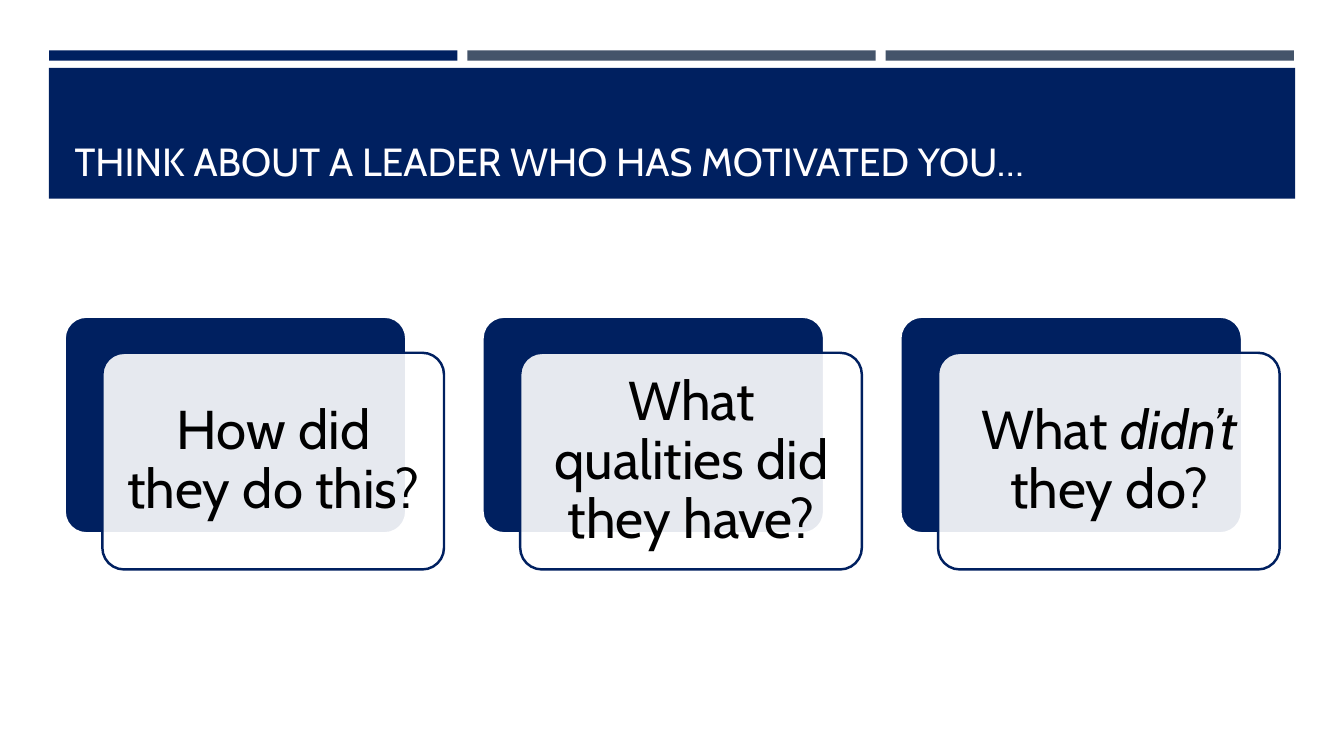
from dataclasses import dataclass

from lxml.etree import SubElement
from pptx import Presentation
from pptx.dml.color import RGBColor
from pptx.enum.shapes import MSO_SHAPE as Preset
from pptx.enum.text import MSO_ANCHOR as Anchor, PP_ALIGN as Align
from pptx.oxml.ns import qn
from pptx.util import Cm, Pt


@dataclass(frozen=True)
class Theme:
    navy: str = "002060"
    slate: str = "44546A"
    white: str = "FFFFFF"
    title_text: str = "FFFEFF"
    card_text: str = "000000"
    font: str = "Cabin"
    title_size: float = 28
    card_size: float = 39
    outline: float = 1.75


THEME = Theme()

# Each card is a list of (text, italic) runs
CARDS = [
    [("How did they do this?", False)],
    [("What qualities did they have?", False)],
    [("What ", False), ("didn’t ", True), ("they do?", False)],
]


def apply_format(target, values):
    for name, value in values.items():
        setattr(target, name, value)


def add_block(slide, preset, box, fill, line=None, opacity=None):
    """Draw a filled shape; box is left, top, width, height in cm."""
    shape = slide.shapes.add_shape(preset, *map(Cm, box))
    shape.shadow.inherit = False
    shape.fill.solid()
    shape.fill.fore_color.rgb = RGBColor.from_string(fill)
    if opacity is not None:
        color = shape.fill._xPr.find(".//" + qn("a:srgbClr"))
        SubElement(color, qn("a:alpha"), val=str(opacity * 1000))
    if line:
        shape.line.color.rgb = RGBColor.from_string(line)
        shape.line.width = Pt(THEME.outline)
    else:
        shape.line.fill.background()
    return shape


def add_text(slide, box, runs, size, color, frame_format, paragraph_format):
    frame = slide.shapes.add_textbox(*map(Cm, box)).text_frame
    apply_format(frame, {"word_wrap": True, **frame_format})
    paragraph = frame.paragraphs[0]
    apply_format(paragraph, paragraph_format)
    for text, italic in runs:
        run = paragraph.add_run()
        run.text = text
        apply_format(run.font, {"name": THEME.font, "size": Pt(size), "italic": italic})
        run.font.color.rgb = RGBColor.from_string(color)


def add_header(slide, title):
    # Three accent bars above the title band
    for index, color in enumerate([THEME.navy, THEME.slate, THEME.slate]):
        add_block(slide, Preset.RECTANGLE, (1.24 + index * 10.54, 1.27, 10.29, 0.26), color)
    add_block(slide, Preset.RECTANGLE, (1.23, 1.71, 31.41, 3.3), THEME.navy)
    add_text(slide, (1.63, 1.96, 30.63, 2.82), [(title, False)],
             THEME.title_size, THEME.title_text,
             {"vertical_anchor": Anchor.BOTTOM}, {"alignment": Align.LEFT})


def add_card(slide, left, top, runs):
    width, height = 8.61, 5.46
    # Solid back plate, then the translucent front plate shifted right and down
    plates = [
        (0, 0, THEME.navy, THEME.white, None),
        (0.95, 0.91, THEME.white, THEME.navy, 90),
    ]
    for shift_x, shift_y, fill, line, opacity in plates:
        plate = add_block(slide, Preset.ROUNDED_RECTANGLE,
                          (left + shift_x, top + shift_y, width, height),
                          fill, line, opacity)
        plate.adjustments[0] = 0.1
    margins = {f"margin_{side}": Cm(0.41) for side in ("left", "top", "right", "bottom")}
    add_text(slide, (left + 1.11, top + 1.07, 8.31, 5.16), runs,
             THEME.card_size, THEME.card_text,
             {"vertical_anchor": Anchor.MIDDLE, **margins},
             {"alignment": Align.CENTER, "line_spacing": 0.9})


def main():
    presentation = Presentation()
    apply_format(presentation, {"slide_width": Cm(33.87), "slide_height": Cm(19.05)})
    slide = presentation.slides.add_slide(presentation.slide_layouts[6])

    add_header(slide, "THINK ABOUT A LEADER WHO HAS MOTIVATED YOU…")

    # Row of question cards
    for index, runs in enumerate(CARDS):
        add_card(slide, 1.63 + index * 10.53, 7.98, runs)

    presentation.save("out.pptx")


if __name__ == "__main__":
    main()
